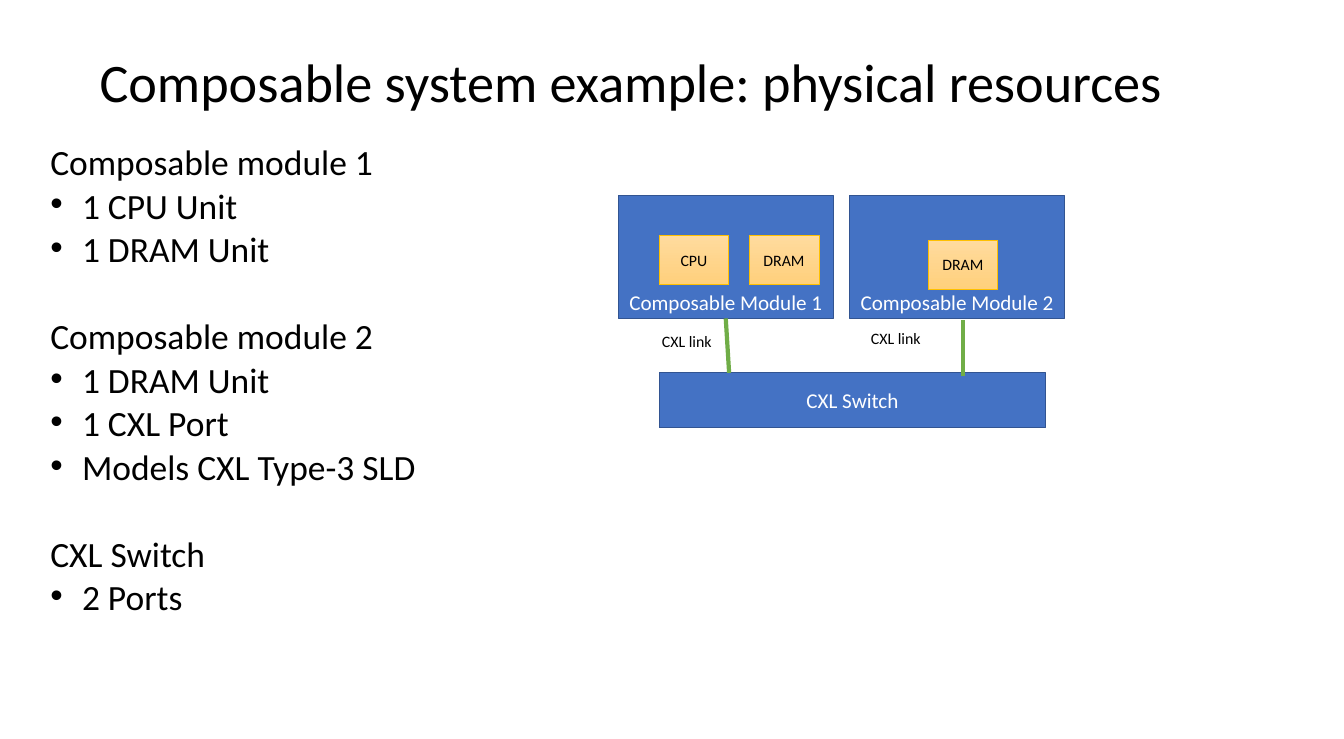
from dataclasses import dataclass

from lxml.etree import SubElement
from pptx import Presentation
from pptx.dml.color import RGBColor
from pptx.enum.shapes import MSO_CONNECTOR, MSO_SHAPE
from pptx.enum.text import MSO_ANCHOR, MSO_AUTO_SIZE, PP_ALIGN
from pptx.oxml.ns import qn
from pptx.util import Pt


@dataclass(frozen=True)
class Theme:
    font: str = "Calibri"
    black: str = "000000"
    white: str = "FFFFFF"
    module: str = "4472C4"
    module_line: str = "325491"
    chip: tuple = ("FFDB9E", "FFD07C")
    chip_line: str = "FFC000"
    link: str = "70AD47"
    title_size: float = 58.1
    body_size: float = 38
    module_size: float = 22.6
    small_size: float = 17


class ResourceSlide:
    def __init__(self, prs, theme):
        self.theme = theme
        self.s = prs.slides.add_slide(prs.slide_layouts[5])

    def format(self, p, size, color, align=PP_ALIGN.LEFT):
        p.alignment = align
        for r in p.runs:
            r.font.name = self.theme.font
            r.font.size = Pt(size)
            r.font.color.rgb = RGBColor.from_string(color)

    def title(self, text, x, y, w, h):
        sp = self.s.shapes.title
        sp.left, sp.top, sp.width, sp.height = Pt(x), Pt(y), Pt(w), Pt(h)
        tf = sp.text_frame
        tf.text = text
        tf.auto_size = MSO_AUTO_SIZE.NONE
        tf.vertical_anchor = MSO_ANCHOR.MIDDLE
        p = tf.paragraphs[0]
        p.line_spacing = 0.9
        self.format(p, self.theme.title_size, self.theme.black)

    def textbox(self, x, y, w, h):
        tf = self.s.shapes.add_textbox(Pt(x), Pt(y), Pt(w), Pt(h)).text_frame
        tf.word_wrap = True
        return tf

    def label(self, text, x, y):
        tf = self.textbox(x, y, 131, 28.8)
        tf.text = text
        self.format(tf.paragraphs[0], self.theme.small_size, self.theme.black)

    def resource_list(self, groups, x, y, w, h):
        tf = self.textbox(x, y, w, h)
        p = tf.paragraphs[0]
        for heading, items in groups:
            if p.text:
                p = tf.add_paragraph()
            self.list_line(p, heading, 61.5)
            for item in items:
                p = tf.add_paragraph()
                self.list_line(p, item, 14.7)
                self.bullet(p)

    def list_line(self, p, text, space_before):
        p.text = text
        p.line_spacing = 0.7
        p.space_before = Pt(space_before)
        self.format(p, self.theme.body_size, self.theme.black)

    def bullet(self, p):
        pPr = p._p.get_or_add_pPr()
        pPr.set("marL", str(Pt(34)))
        pPr.set("indent", str(Pt(-34)))
        SubElement(pPr, qn("a:buFont")).set("typeface", "Arial")
        SubElement(pPr, qn("a:buChar")).set("char", "•")

    def box(self, text, x, y, w, h, size, color, line, line_width, anchor):
        sp = self.s.shapes.add_shape(MSO_SHAPE.RECTANGLE, Pt(x), Pt(y), Pt(w), Pt(h))
        sp.shadow.inherit = False
        sp.line.color.rgb = RGBColor.from_string(line)
        sp.line.width = Pt(line_width)
        tf = sp.text_frame
        tf.text = text
        tf.word_wrap = True
        tf.vertical_anchor = anchor
        self.format(tf.paragraphs[0], size, color, PP_ALIGN.CENTER)
        return sp

    def module(self, text, x, y, w, h, anchor=MSO_ANCHOR.BOTTOM):
        t = self.theme
        sp = self.box(text, x, y, w, h, t.module_size, t.white, t.module_line, 1, anchor)
        sp.fill.solid()
        sp.fill.fore_color.rgb = RGBColor.from_string(t.module)
        return sp

    def chip(self, text, x, y):
        t = self.theme
        sp = self.box(text, x, y, 74.5, 53, t.small_size, t.black, t.chip_line, 0.5,
                      MSO_ANCHOR.MIDDLE)
        sp.fill.gradient()
        sp.fill.gradient_angle = 270
        for stop, color in zip(sp.fill.gradient_stops, t.chip):
            stop.color.rgb = RGBColor.from_string(color)

    def link(self, x1, y1, x2, y2, source=None):
        cxn = self.s.shapes.add_connector(MSO_CONNECTOR.STRAIGHT, Pt(x1), Pt(y1), Pt(x2), Pt(y2))
        if source is not None:
            cxn.begin_connect(source, 2)
        cxn.line.color.rgb = RGBColor.from_string(self.theme.link)
        cxn.line.width = Pt(4.5)
        SubElement(cxn._element.spPr, qn("a:effectLst"))


def main():
    prs = Presentation()
    prs.slide_width, prs.slide_height = Pt(1440), Pt(792)
    slide = ResourceSlide(prs, Theme())

    slide.title("Composable system example: physical resources", 99.4, 42.5, 1242, 98)
    slide.resource_list([
        ("Composable module 1", ["1 CPU Unit", "1 DRAM Unit"]),
        ("Composable module 2", ["1 DRAM Unit", "1 CXL Port", "Models CXL Type-3 SLD"]),
        ("CXL Switch", ["2 Ports"]),
    ], 46.8, 159, 442.8, 547)

    module_1, module_2 = [
        slide.module(f"Composable Module {i + 1}", 662.4 + i * 247.7, 209.5, 230.4, 131.8)
        for i in range(2)
    ]
    slide.module("CXL Switch", 706.3, 399.6, 414, 59, MSO_ANCHOR.MIDDLE)

    for text, x, y in [("CPU", 706.3, 252), ("DRAM", 802.8, 252), ("DRAM", 994.5, 257)]:
        slide.chip(text, x, y)

    slide.link(777.6, 341.3, 781.2, 399.6, module_1)
    slide.link(1031.8, 343.4, 1031.8, 402.5)
    for x, y in [(702, 352), (926, 348.5)]:
        slide.label("CXL link", x, y)

    prs.save("out.pptx")


if __name__ == "__main__":
    main()
